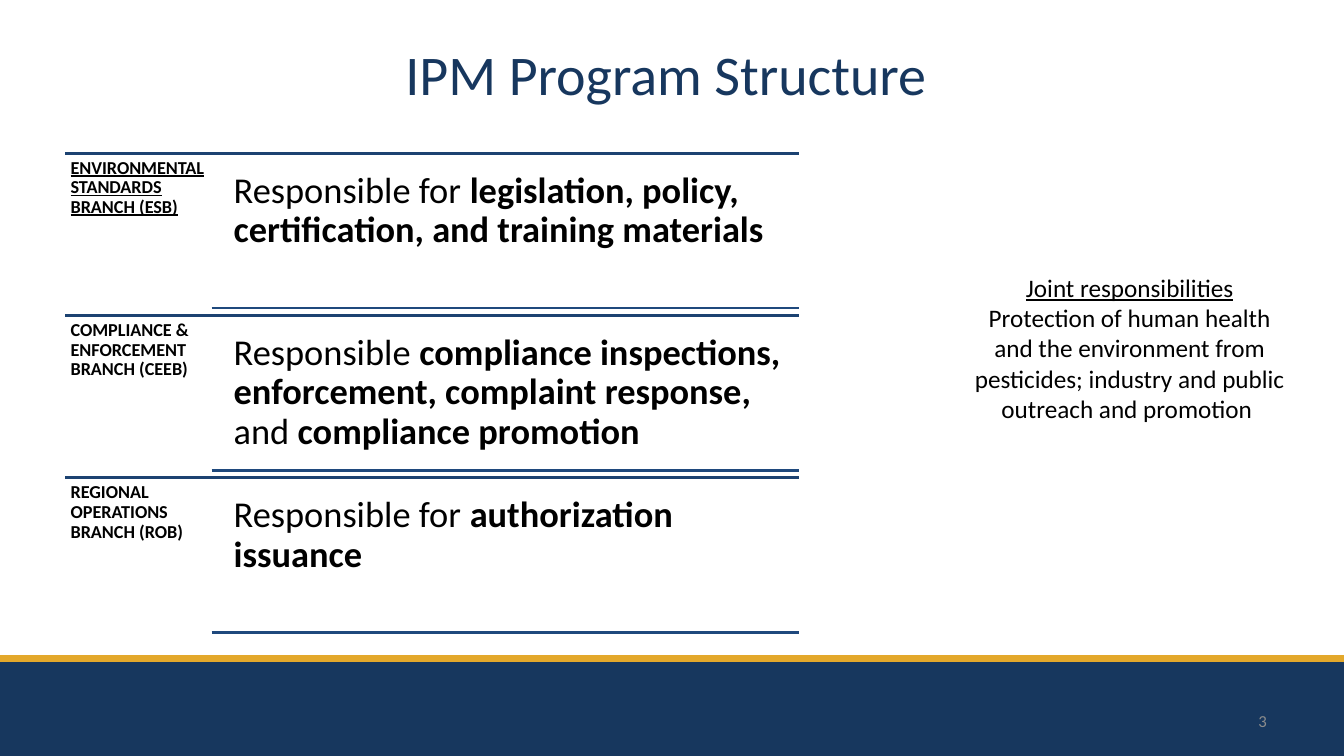
from dataclasses import dataclass

import pptx
import pptx.dml.color
import pptx.enum.shapes
import pptx.enum.text
import pptx.oxml.ns
import pptx.slide
import pptx.util
from lxml import etree

Cm = pptx.util.Cm
RGB = pptx.dml.color.RGBColor
Align = pptx.enum.text.PP_ALIGN
Anchor = pptx.enum.text.MSO_ANCHOR


@dataclass(frozen=True)
class Theme:
    font: str = "Calibri"
    navy: RGB = RGB(0x17, 0x37, 0x5E)
    gold: RGB = RGB(0xE3, 0xA8, 0x2B)
    row_top: RGB = RGB(0x1C, 0x42, 0x71)
    row_bottom: RGB = RGB(0x1F, 0x49, 0x7D)
    black: RGB = RGB(0, 0, 0)
    grey: RGB = RGB(0x8C, 0x8C, 0x8C)
    title_size: float = 40
    duty_size: float = 26
    joint_size: float = 18
    branch_size: float = 13
    number_size: float = 12
    band_line: float = 4.5
    row_line: float = 2


@dataclass(frozen=True)
class Run:
    text: str
    bold: bool = False
    underline: bool = False


@dataclass(frozen=True)
class Box:
    """Position, size and side insets in centimetres."""
    left: float
    top: float
    width: float
    height: float
    inset_x: float = 0.25
    inset_y: float = 0.13


@dataclass(frozen=True)
class Style:
    size: float
    color: RGB
    align: Align = Align.LEFT
    anchor: Anchor = Anchor.TOP
    line_spacing: float = 1.0


@dataclass(frozen=True)
class Branch:
    name: Run
    duties: list[Run]


THEME = Theme()
SLIDE_W, SLIDE_H = 33.87, 19.05
BAND_TOP = 16.59

# Branch rows
ROWS_LEFT, ROWS_RIGHT, ROWS_TOP, ROW_PITCH = 1.65, 20.14, 3.86, 4.09
NAME_W = 3.71
DUTY_LEFT, DUTY_W, DUTY_H, DUTY_OFFSET = 5.61, 14.5, 3.71, 0.19
LOWER_LINE_LEFT = 5.33

BRANCHES = [
    Branch(
        Run("ENVIRONMENTAL STANDARDS BRANCH (ESB)", bold=True, underline=True),
        [Run("Responsible for "),
         Run("legislation, policy, certification, and training materials", bold=True)],
    ),
    Branch(
        Run("COMPLIANCE & ENFORCEMENT BRANCH (CEEB)", bold=True),
        [Run("Responsible "),
         Run("compliance inspections, enforcement, complaint response, ", bold=True),
         Run("and"),
         Run(" compliance promotion", bold=True)],
    ),
    Branch(
        Run("REGIONAL OPERATIONS BRANCH (ROB)", bold=True),
        [Run("Responsible for "), Run("authorization issuance", bold=True)],
    ),
]


def add_text(slide: pptx.slide.Slide, box: Box, paragraphs: list[list[Run]], style: Style) -> None:
    frame = slide.shapes.add_textbox(
        Cm(box.left), Cm(box.top), Cm(box.width), Cm(box.height)).text_frame
    frame.word_wrap = True
    frame.vertical_anchor = style.anchor
    frame.margin_left = frame.margin_right = Cm(box.inset_x)
    frame.margin_top = frame.margin_bottom = Cm(box.inset_y)
    for index, runs in enumerate(paragraphs):
        paragraph = frame.add_paragraph() if index else frame.paragraphs[0]
        paragraph.alignment = style.align
        paragraph.line_spacing = style.line_spacing
        for part in runs:
            run = paragraph.add_run()
            run.text = part.text
            run.font.name = THEME.font
            run.font.size = pptx.util.Pt(style.size)
            run.font.color.rgb = style.color
            run.font.bold = part.bold
            run.font.underline = part.underline


def add_rule(slide: pptx.slide.Slide, left: float, right: float, y: float,
             color: RGB, weight: float) -> None:
    rule = slide.shapes.add_connector(
        pptx.enum.shapes.MSO_CONNECTOR.STRAIGHT, Cm(left), Cm(y), Cm(right), Cm(y))
    rule.line.color.rgb = color
    rule.line.width = pptx.util.Pt(weight)
    etree.SubElement(rule._element.spPr, pptx.oxml.ns.qn("a:effectLst"))


def add_footer_band(slide: pptx.slide.Slide) -> None:
    band = slide.shapes.add_shape(
        pptx.enum.shapes.MSO_SHAPE.RECTANGLE,
        Cm(0), Cm(BAND_TOP), Cm(SLIDE_W), Cm(SLIDE_H - BAND_TOP))
    band.shadow.inherit = False
    band.fill.solid()
    band.fill.fore_color.rgb = THEME.navy
    band.line.fill.background()
    add_rule(slide, 0, SLIDE_W, BAND_TOP, THEME.gold, THEME.band_line)


def add_branch(slide: pptx.slide.Slide, branch: Branch, top: float) -> None:
    duty_top = top + DUTY_OFFSET
    add_rule(slide, ROWS_LEFT, ROWS_RIGHT, top, THEME.row_top, THEME.row_line)
    add_text(slide, Box(ROWS_LEFT, top, NAME_W, ROW_PITCH, 0.13, 0.13), [[branch.name]],
             Style(THEME.branch_size, THEME.black, line_spacing=0.9))
    add_text(slide, Box(DUTY_LEFT, duty_top, DUTY_W, DUTY_H, 0.28, 0.28), [branch.duties],
             Style(THEME.duty_size, THEME.black, line_spacing=0.9))
    add_rule(slide, LOWER_LINE_LEFT, ROWS_RIGHT, duty_top + DUTY_H,
             THEME.row_bottom, THEME.row_line)


def main() -> None:
    deck = pptx.Presentation()
    deck.slide_width, deck.slide_height = Cm(SLIDE_W), Cm(SLIDE_H)
    slide = deck.slides.add_slide(deck.slide_layouts[6])

    # Footer band, title and slide number
    add_footer_band(slide)
    add_text(slide, Box(1.7, 0.76, 30.48, 2.16), [[Run("IPM Program Structure ")]],
             Style(THEME.title_size, THEME.navy, Align.CENTER, Anchor.MIDDLE))
    add_text(slide, Box(24.28, 17.65, 7.9, 1.02), [[Run("3")]],
             Style(THEME.number_size, THEME.grey, Align.RIGHT, Anchor.MIDDLE))

    # Branches and their duties
    for index, branch in enumerate(BRANCHES):
        add_branch(slide, branch, ROWS_TOP + index * ROW_PITCH)

    # Shared duties
    joint_duties = [
        [Run("Joint responsibilities", underline=True)],
        [Run("Protection of human health and the environment from pesticides; "
             "industry and public outreach and promotion ")],
    ]
    add_text(slide, Box(24.28, 6.73, 8.38, 4.11), joint_duties,
             Style(THEME.joint_size, THEME.black, Align.CENTER))

    deck.save("out.pptx")


if __name__ == "__main__":
    main()
